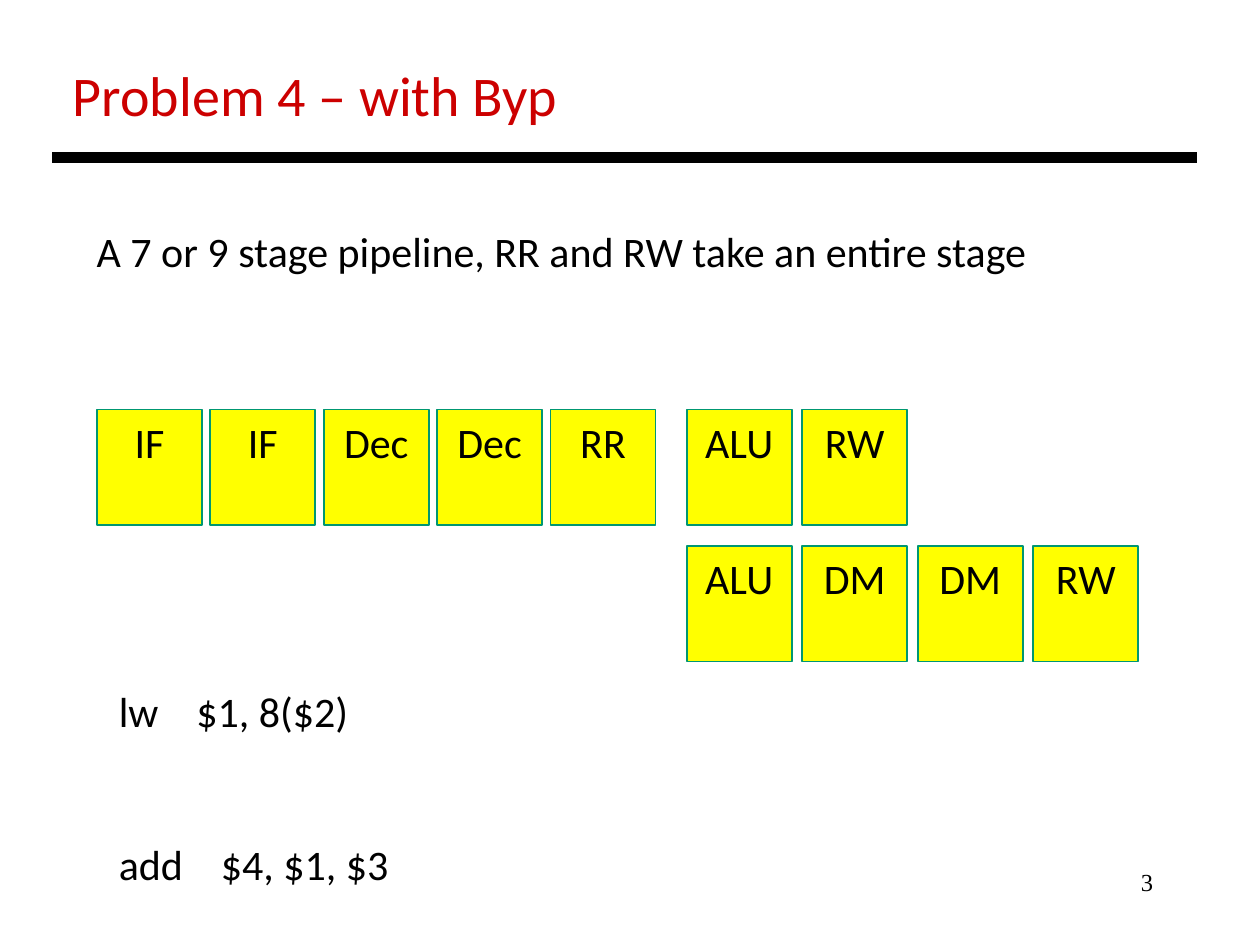
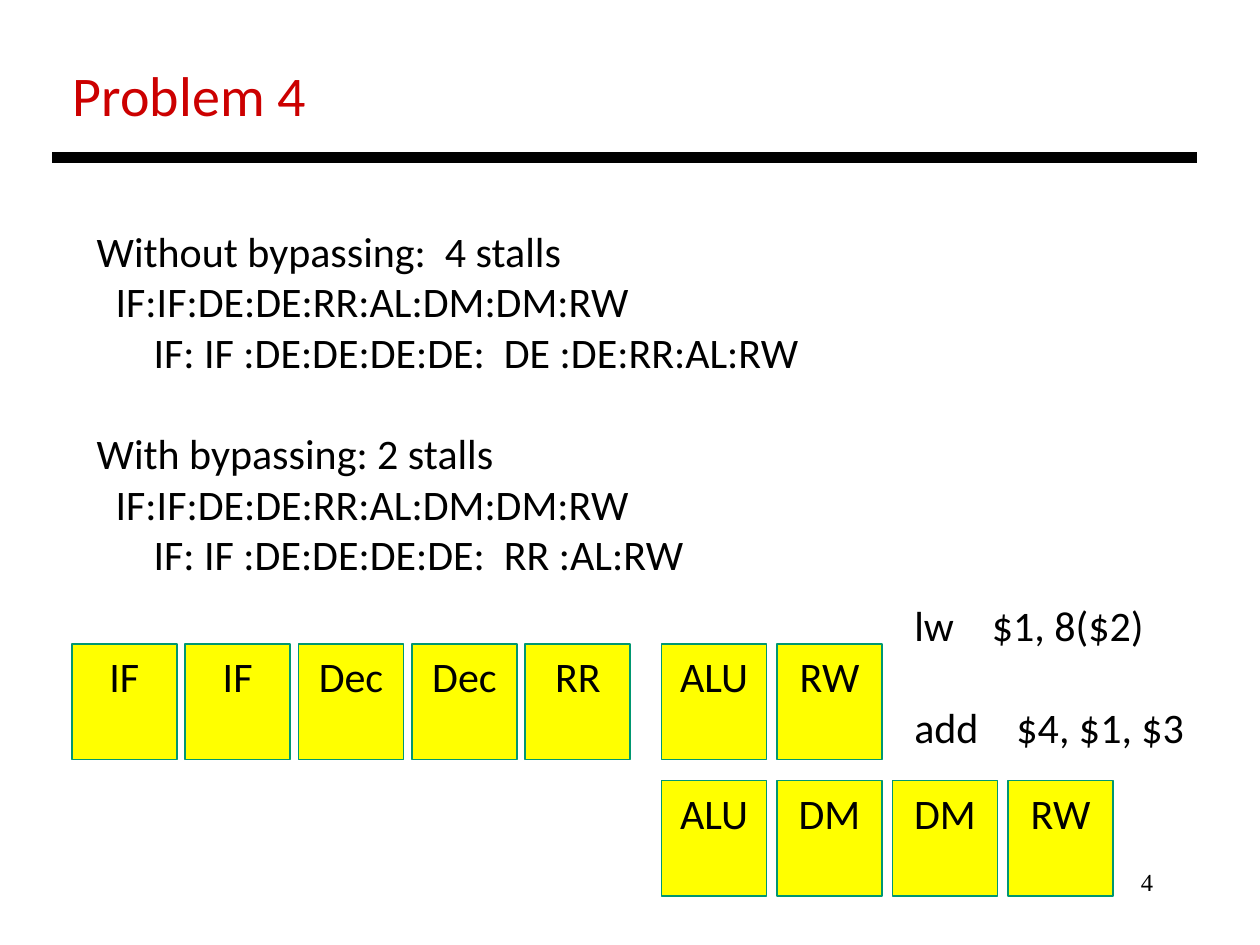
from typing import NamedTuple

from lxml import etree
from pptx import Presentation
from pptx import util as u
from pptx.dml.color import RGBColor
from pptx.enum import shapes, text
from pptx.oxml.ns import qn

Pt = u.Pt
COLORS = {"ink": "000000", "title": "CC0000", "stage": "FFFF00", "stage_edge": "009771"}
BODY_FONT, NUMBER_FONT = "Calibri", "Times New Roman"
BODY_SIZE, TITLE_SIZE, NUMBER_SIZE = 24, 32, 14
LINE_HEIGHT = 29.3
SPACE_WIDTH = 5.42

STAGE_WIDTH, STAGE_HEIGHT = 60, 66
FRONT_STAGES = ("IF", "IF", "Dec", "Dec", "RR")
ALU_STAGES = ("ALU", "RW")
MEMORY_STAGES = ("ALU", "DM", "DM", "RW")
FRONT_PITCH, BACK_PITCH = 64.8, 66
BACK_OFFSET, ROW_PITCH = 337, 78


class Line(NamedTuple):
    words: str
    indent: float = 0
    before: float = 0
    tab: float = 0


class Box(NamedTuple):
    left: float
    top: float
    width: float
    height: float


class Problem(NamedTuple):
    title: str
    number: int
    body: tuple[Line, ...]
    pipeline_left: float
    pipeline_top: float
    code_box: Box
    code_gap: int


TITLE_BOX = Box(34.6, 31, 640, 46)
BODY_BOX = Box(48.2, 125.3, 620, 211)
NUMBER_BOX = Box(516.2, 491.8, 149.8, 36)
FIRST, SECOND = 2 * SPACE_WIDTH, 6 * SPACE_WIDTH

PROBLEMS = (
    Problem(
        "Problem 4 – with Byp", 3,
        (Line("A 7 or 9 stage pipeline, RR and RW take an entire stage"),),
        55.4, 234, Box(60.8, 388, 175, 124), 2,
    ),
    Problem(
        "Problem 4", 4,
        (
            Line("Without bypassing:  4 stalls"),
            Line("IF:IF:DE:DE:RR:AL:DM:DM:RW", FIRST),
            Line("IF: IF :DE:DE:DE:DE:  DE :DE:RR:AL:RW", SECOND),
            Line("With bypassing: 2 stalls", before=LINE_HEIGHT),
            Line("IF:IF:DE:DE:RR:AL:DM:DM:RW", FIRST),
            Line("IF: IF :DE:DE:DE:DE:  RR :AL:RW", SECOND),
        ),
        41, 368, Box(515.4, 339, 175, 94), 1,
    ),
)


def rgb(name: str) -> RGBColor:
    return RGBColor.from_string(COLORS[name])


def add_words(paragraph, words: str, size: float = BODY_SIZE, color: str = "ink",
              font: str = BODY_FONT) -> None:
    run = paragraph.add_run()
    run.text = words
    run.font.size = Pt(size)
    run.font.name = font
    run.font.color.rgb = rgb(color)


def set_layout(paragraph, line: Line) -> None:
    """Apply the gap above, the left indent and the tab stop of a line."""
    if line.before:
        paragraph.space_before = Pt(line.before)
    properties = paragraph._p.get_or_add_pPr()
    if line.indent:
        properties.set("marL", str(Pt(line.indent)))
        properties.set("indent", "0")
    if line.tab:
        stops = etree.SubElement(properties, qn("a:tabLst"))
        etree.SubElement(stops, qn("a:tab"), pos=str(Pt(line.tab)), algn="l")


def add_text(slide, box: Box, lines: tuple[Line, ...], size: float = BODY_SIZE,
             color: str = "ink", font: str = BODY_FONT,
             align: text.PP_ALIGN = text.PP_ALIGN.LEFT) -> None:
    frame = slide.shapes.add_textbox(*map(Pt, box)).text_frame
    frame.word_wrap = True
    for index, line in enumerate(lines):
        paragraph = frame.add_paragraph() if index else frame.paragraphs[0]
        paragraph.alignment = align
        set_layout(paragraph, line)
        add_words(paragraph, line.words, size, color, font)


def add_title_rule(slide) -> None:
    rule = slide.shapes.add_connector(
        shapes.MSO_CONNECTOR.STRAIGHT, Pt(30), Pt(90), Pt(684), Pt(90))
    rule.line.color.rgb = rgb("ink")
    rule.line.width = Pt(6)
    etree.SubElement(rule._element.spPr, qn("a:effectLst"))


def add_stages(slide, names: tuple[str, ...], left: float, top: float, pitch: float) -> None:
    for index, name in enumerate(names):
        stage = slide.shapes.add_shape(
            shapes.MSO_SHAPE.RECTANGLE, Pt(left + index * pitch), Pt(top),
            Pt(STAGE_WIDTH), Pt(STAGE_HEIGHT))
        stage.shadow.inherit = False
        stage.fill.solid()
        stage.fill.fore_color.rgb = rgb("stage")
        stage.line.color.rgb = rgb("stage_edge")
        stage.line.width = Pt(1)
        frame = stage.text_frame
        frame.vertical_anchor = text.MSO_ANCHOR.TOP
        frame.margin_top = Pt(4)
        frame.margin_left = frame.margin_right = 0
        frame.paragraphs[0].alignment = text.PP_ALIGN.CENTER
        add_words(frame.paragraphs[0], name)


def add_pipeline(slide, left: float, top: float) -> None:
    """Draw the shared front stages, then the ALU path above the memory path."""
    add_stages(slide, FRONT_STAGES, left, top, FRONT_PITCH)
    for row, names in enumerate((ALU_STAGES, MEMORY_STAGES)):
        add_stages(slide, names, left + BACK_OFFSET, top + row * ROW_PITCH, BACK_PITCH)


def add_problem(deck, problem: Problem) -> None:
    slide = deck.slides.add_slide(deck.slide_layouts[6])
    add_text(slide, NUMBER_BOX, (Line(str(problem.number)),), NUMBER_SIZE,
             font=NUMBER_FONT, align=text.PP_ALIGN.RIGHT)
    add_text(slide, TITLE_BOX, (Line(problem.title),), TITLE_SIZE, "title")
    add_title_rule(slide)
    add_pipeline(slide, problem.pipeline_left, problem.pipeline_top)
    code = (
        Line("lw\t$1, 8($2)", tab=44.3),
        Line("add\t$4, $1, $3", before=problem.code_gap * LINE_HEIGHT, tab=58.4),
    )
    add_text(slide, problem.code_box, code)
    add_text(slide, BODY_BOX, problem.body)


def main() -> None:
    deck = Presentation()
    deck.slide_width, deck.slide_height = Pt(720), Pt(540)
    for problem in PROBLEMS:
        add_problem(deck, problem)
    deck.save("out.pptx")


if __name__ == "__main__":
    main()
